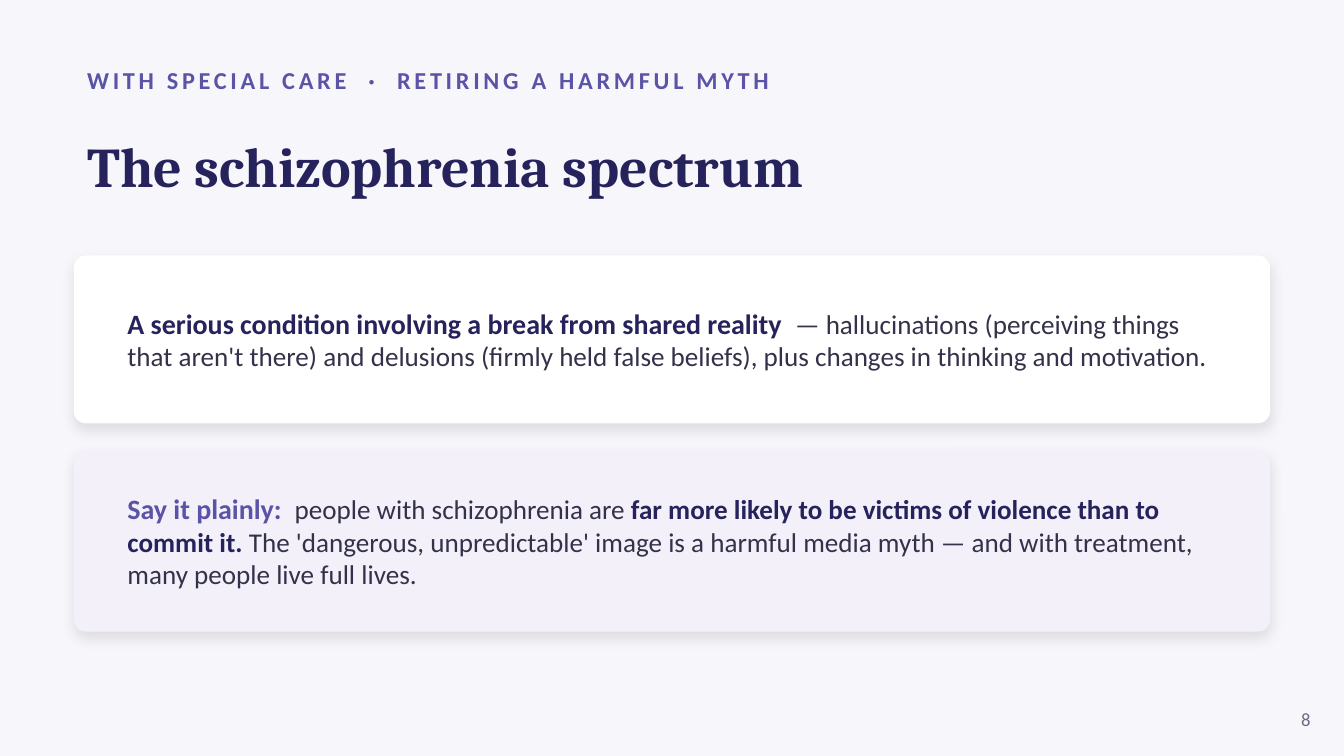
from typing import NamedTuple

from lxml.etree import SubElement as Sub
from pptx import Presentation
from pptx.dml.color import RGBColor as RGB
from pptx.enum.shapes import MSO_SHAPE as Shape
from pptx.enum.text import MSO_ANCHOR as Anchor, MSO_AUTO_SIZE as Fit, PP_ALIGN as Align
from pptx.oxml.ns import qn
from pptx.util import Pt

HEX = {
    "page": "F7F7FB",
    "white": "FFFFFF",
    "lilac": "F3F0FA",
    "violet": "5B53A6",
    "navy": "26235C",
    "ink": "33324A",
    "grey": "6B6A86",
    "shade": "000000",
}
EDGE = 39.6
WIDTH = 640.8
PAD = 21.6


class Run(NamedTuple):
    text: str
    size: float
    color: str
    bold: bool = False
    font: str = "Calibri"
    track: float = 0


class Card(NamedTuple):
    top: float
    height: float
    fill: str
    inset: float
    runs: list[Run]


CARDS = [
    Card(136.8, 90, "white", 14.4, [
        Run("A serious condition involving a break from shared reality  ", 15, "navy", True),
        Run("— hallucinations (perceiving things that aren't there) and delusions "
            "(firmly held false beliefs), plus changes in thinking and motivation.",
            14.5, "ink"),
    ]),
    Card(241.2, 97.2, "lilac", 10.8, [
        Run("Say it plainly:  ", 15, "violet", True),
        Run("people with schizophrenia are ", 14.5, "ink"),
        Run("far more likely to be victims of violence than to commit it.", 14.5, "navy", True),
        Run(" The 'dangerous, unpredictable' image is a harmful media myth — "
            "and with treatment, many people live full lives.", 14.5, "ink"),
    ]),
]


def color(name: str) -> RGB:
    return RGB.from_string(HEX[name])


def write(box, runs: list[Run], align: Align = Align.LEFT) -> None:
    frame = box.text_frame
    frame.word_wrap = True
    frame.auto_size = Fit.NONE
    frame.vertical_anchor = Anchor.MIDDLE
    para = frame.paragraphs[0]
    para.alignment = align
    for item in runs:
        run = para.add_run()
        run.text = item.text
        font = run.font
        font.name, font.size, font.bold = item.font, Pt(item.size), item.bold
        font.color.rgb = color(item.color)
        if item.track:
            run._r.get_or_add_rPr().set("spc", str(int(item.track * 100)))


def add_text(slide, left: float, top: float, width: float, height: float,
             runs: list[Run], align: Align = Align.LEFT) -> None:
    box = slide.shapes.add_textbox(Pt(left), Pt(top), Pt(width), Pt(height))
    write(box, runs, align)


def add_shade(shape) -> None:
    """Give the shape a soft shadow that falls straight down."""
    shape.shadow.inherit = False
    effects = shape._element.spPr.find(qn("a:effectLst"))
    outer = Sub(effects, qn("a:outerShdw"), blurRad=str(Pt(7)), dist=str(Pt(3)),
                dir="5400000", algn="bl", rotWithShape="0")
    tint = Sub(outer, qn("a:srgbClr"), val=HEX["shade"])
    Sub(tint, qn("a:alpha"), val="10000")


def add_card(slide, card: Card) -> None:
    panel = slide.shapes.add_shape(Shape.ROUNDED_RECTANGLE, Pt(EDGE), Pt(card.top),
                                   Pt(WIDTH), Pt(card.height))
    panel.adjustments[0] = 6.5 / card.height
    panel.fill.solid()
    panel.fill.fore_color.rgb = color(card.fill)
    panel.line.fill.background()
    add_shade(panel)
    add_text(slide, EDGE + PAD, card.top + card.inset, WIDTH - 2 * PAD,
             card.height - 2 * card.inset, card.runs)


def main() -> None:
    deck = Presentation()
    deck.slide_width, deck.slide_height = Pt(720), Pt(405)
    slide = deck.slides.add_slide(deck.slide_layouts[5])
    back = slide.background.fill
    back.solid()
    back.fore_color.rgb = color("page")

    add_text(slide, EDGE, 30.24, 648, 25.2, [
        Run("WITH SPECIAL CARE  ·  RETIRING A HARMFUL MYTH", 13, "violet", True, track=2)])
    title = slide.shapes.title
    title.left, title.top = Pt(EDGE), Pt(56.16)
    title.width, title.height = Pt(WIDTH), Pt(64.8)
    write(title, [Run("The schizophrenia spectrum", 30, "navy", True, "Cambria")])
    for card in CARDS:
        add_card(slide, card)
    add_text(slide, 673.2, 374.4, 36, 21.6, [Run("8", 10, "grey")], Align.RIGHT)
    deck.save("out.pptx")


if __name__ == "__main__":
    main()
